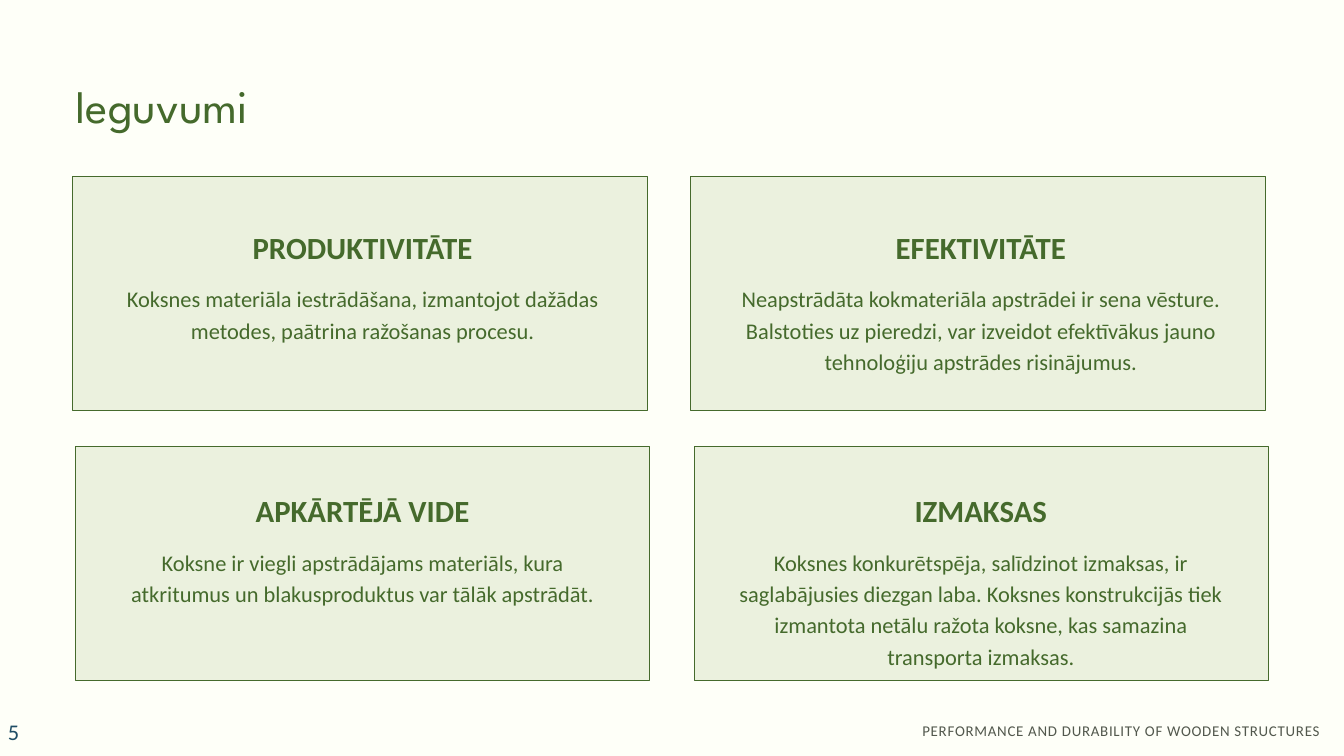
from pptx import Presentation
from pptx.dml.color import RGBColor
from pptx.enum.shapes import MSO_SHAPE
from pptx.enum.text import MSO_ANCHOR, MSO_AUTO_SIZE, PP_ALIGN
from pptx.util import Inches, Pt

RECT = MSO_SHAPE.RECTANGLE
TOP, MIDDLE = MSO_ANCHOR.TOP, MSO_ANCHOR.MIDDLE
GROW = MSO_AUTO_SIZE.SHAPE_TO_FIT_TEXT
LEFT, CENTER, RIGHT = PP_ALIGN.LEFT, PP_ALIGN.CENTER, PP_ALIGN.RIGHT

CREAM = RGBColor(0xFE, 0xFF, 0xF8)
PALE = RGBColor(0xEB, 0xF1, 0xDE)
GREEN = RGBColor(0x45, 0x6A, 0x2C)
GRAY = RGBColor(0x52, 0x58, 0x4D)
BLUE = RGBColor(0x1E, 0x4D, 0x65)

FLUSH = {
    "margin_left": 0, "margin_top": 0, "margin_right": 0, "margin_bottom": 0,
    "word_wrap": True, "auto_size": GROW, "vertical_anchor": TOP,
}
MID = {"word_wrap": True, "vertical_anchor": MIDDLE}

TITLE = {"name": "League Spartan", "size": Pt(50), "bold": False}
HEAD = {"name": "Calibri", "size": Pt(33), "bold": True}
BODY = {"name": "Calibri", "size": Pt(24), "bold": False}
FOOT = {"name": "Calibri", "size": Pt(16), "bold": False}

CARD_W, CARD_H = 8.55, 3.48
TEXT_W = 7.39
TEXT_X = (1.7, 10.9)
ROWS = ((2.62, 3.38), (6.64, 7.3))
CARDS = (
    (1.08, 0, 0, 1.4, "PRODUKTIVITĀTE",
     "Koksnes materiāla iestrādāšana, izmantojot dažādas metodes, "
     "paātrina ražošanas procesu."),
    (10.28, 0, 1, 1.87, "EFEKTIVITĀTE",
     "Neapstrādāta kokmateriāla apstrādei ir sena vēsture. Balstoties uz "
     "pieredzi, var izveidot efektīvākus jauno tehnoloģiju apstrādes "
     "risinājumus."),
    (1.12, 1, 0, 1.4, "APKĀRTĒJĀ VIDE",
     "Koksne ir viegli apstrādājams materiāls, kura atkritumus un "
     "blakusproduktus var tālāk apstrādāt."),
    (10.33, 1, 1, 1.87, "IZMAKSAS",
     "Koksnes konkurētspēja, salīdzinot izmaksas, ir saglabājusies diezgan "
     "laba. Koksnes konstrukcijās tiek izmantota netālu ražota koksne, kas "
     "samazina transporta izmaksas."),
)


def apply(item, values):
    """Set each attribute of an item from a dict."""
    for key, value in values.items():
        setattr(item, key, value)


def write(shape, text, font, color, align=LEFT, lead=None, track=0, frame=FLUSH):
    """Fill a shape with one formatted paragraph."""
    apply(shape.text_frame, frame)
    par = shape.text_frame.paragraphs[0]
    par.alignment = align
    if lead:
        par.line_spacing = Pt(lead)
    run = par.add_run()
    run.text = text
    apply(run.font, font)
    run.font.color.rgb = color
    if track:
        run._r.get_or_add_rPr().set("spc", str(track))


def add_text(shapes, box, *args, **style):
    """Add a text box at the given place."""
    write(shapes.add_textbox(*map(Inches, box)), *args, **style)


def add_title(slide, text):
    """Place and fill the title."""
    title = slide.shapes.title
    places = zip(("left", "top", "width", "height"), (1.12, 1.05, 7.75, 0.94))
    apply(title, {key: Inches(value) for key, value in places})
    write(title, text, TITLE, GREEN, lead=66.8)


def add_card(slide, left, row, col, height, head, body):
    """Add a framed panel with a heading and a text."""
    top, text_y = ROWS[row]
    panel = slide.shapes.add_shape(
        RECT, *map(Inches, (left, top, CARD_W, CARD_H)))
    panel.shadow.inherit = False
    panel.fill.solid()
    panel.fill.fore_color.rgb = PALE
    panel.line.color.rgb = GREEN
    panel.line.width = Pt(0.75)
    group = slide.shapes.add_group_shape().shapes
    text_x = TEXT_X[col]
    add_text(group, (text_x, text_y, TEXT_W, 0.56), head, HEAD, GREEN,
             align=CENTER, lead=41.2)
    add_text(group, (text_x, text_y + 0.8, TEXT_W, height), body, BODY, GREEN,
             align=CENTER, lead=33.6)


def main():
    """Build the slide and save it."""
    deck = Presentation()
    deck.slide_width, deck.slide_height = Inches(20), Inches(11.25)
    slide = deck.slides.add_slide(deck.slide_layouts[5])
    slide.background.fill.solid()
    slide.background.fill.fore_color.rgb = CREAM
    add_text(slide.shapes, (11.33, 10.7, 8.32, 0.29),
             "PERFORMANCE AND DURABILITY OF WOODEN STRUCTURES", FOOT, GRAY,
             align=RIGHT, lead=22.4, track=80)
    add_title(slide, "Ieguvumi")
    for card in CARDS:
        add_card(slide, *card)
    add_text(slide.shapes, (0.02, 10.69, 2.33, 0.4), "5", BODY, BLUE,
             track=120, frame=MID)
    deck.save("out.pptx")


if __name__ == "__main__":
    main()
